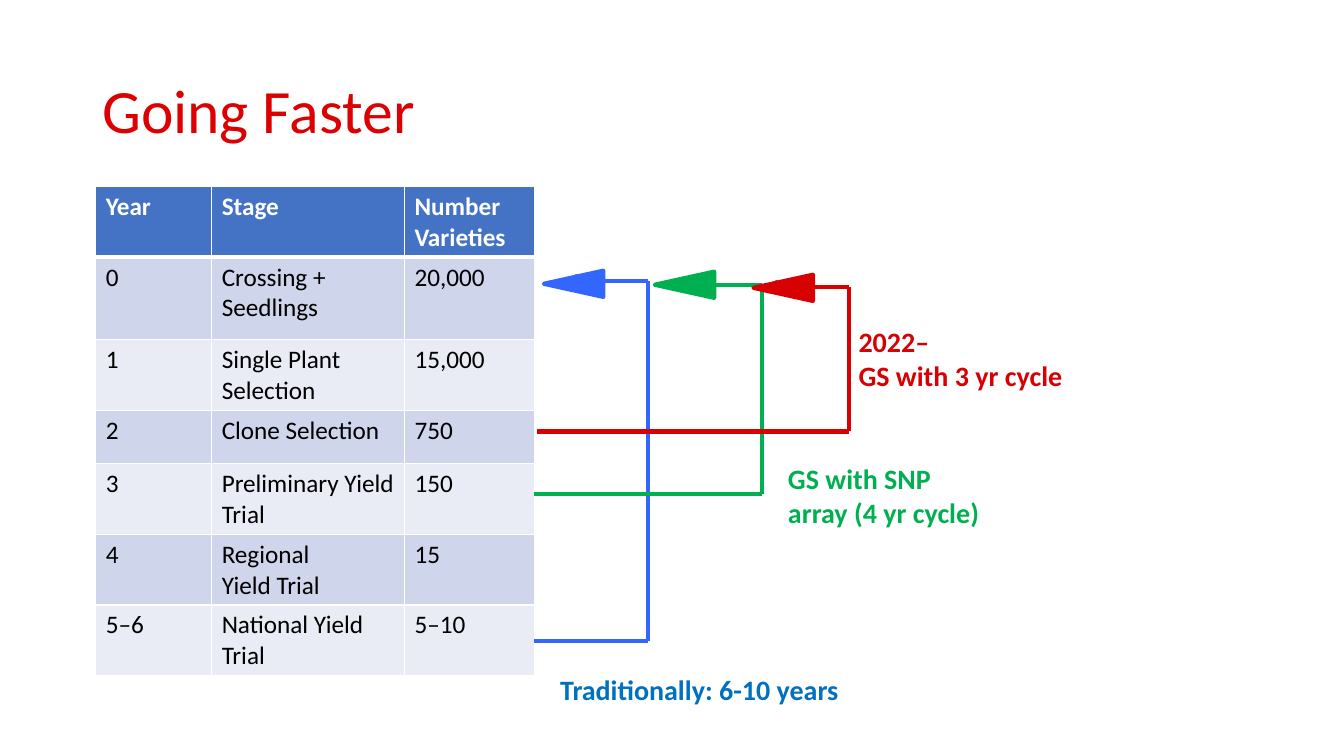
"""Build the "Going Faster" slide: a breeding stage table with three shortening cycle loops."""
from pptx import Presentation
from pptx.dml.color import RGBColor
from pptx.enum.shapes import MSO_CONNECTOR, MSO_SHAPE
from pptx.enum.text import MSO_ANCHOR, MSO_AUTO_SIZE
from pptx.oxml.ns import qn
from pptx.util import Pt
from lxml.etree import SubElement as Sub

TITLE = "Going Faster"
STAGES = [
    ("Year", "Stage", "Number Varieties"),
    ("0", "Crossing + Seedlings", "20,000"),
    ("1", "Single Plant Selection", "15,000"),
    ("2", "Clone Selection", "750"),
    ("3", "Preliminary Yield Trial", "150"),
    ("4", "Regional\nYield Trial", "15"),
    ("5–6", "National Yield Trial", "5–10"),
]
CYCLES = [
    dict(color="3366FF", left=381.6, right=463, top=201, bottom=458, tip=(409.7, 202.7),
         label="Traditionally: 6-10 years", label_color="0070C0", label_box=(393, 476.6, 230.4, 31.7)),
    dict(color="00B050", left=381.6, right=544.3, top=203.8, bottom=352.8, tip=(488.9, 203.4),
         label="GS with SNP array (4 yr cycle)", label_color="00B050", label_box=(555.8, 326.2, 162.7, 55.4)),
    dict(color="D70002", left=383.8, right=606.2, top=205.2, bottom=308.2, tip=(559.4, 205.6),
         label="2022–\nGS with 3 yr cycle", label_color="D70002", label_box=(606.2, 228.2, 162.7, 55.4)),
]
THEME = dict(font="Calibri", title="DD0002", header="4472C4", bands=("E9EBF5", "CFD5EA"),
             white="FFFFFF", black="000000", title_size=44, cell_size=18, label_size=20, stroke=3)
TITLE_BOX = (66, 28.8, 828, 104.4)
TABLE_AT = (68.4, 133.2)
COLUMNS = (82.8, 137.7, 92.7)
ROWS = (50.4, 59, 50.4, 38.2, 50.4, 50.4, 50.4)
HEAD_REACH = 59.8
HEAD_SIZE = (18.7, 42.5)


def points(*lengths):
    return [Pt(length) for length in lengths]


def rgb(color):
    return RGBColor.from_string(color)


def write(frame, text, size, color, bold=False):
    frame.text = text
    for paragraph in frame.paragraphs:
        font = paragraph.font
        font.name, font.size, font.bold = THEME["font"], Pt(size), bold
        font.color.rgb = rgb(color)


def add_label(slide, box, text, size, color, bold=False):
    frame = slide.shapes.add_textbox(*points(*box)).text_frame
    frame.word_wrap = True
    write(frame, text, size, color, bold)
    return frame


def set_borders(cell, bottom_width):
    properties = cell._tc.get_or_add_tcPr()
    for place, (side, width) in enumerate((("L", 1), ("R", 1), ("T", 1), ("B", bottom_width))):
        border = properties.makeelement(qn(f"a:ln{side}"), {"w": str(Pt(width))})
        Sub(Sub(border, qn("a:solidFill")), qn("a:srgbClr"), val=THEME["white"])
        properties.insert(place, border)


def add_stages(slide):
    table = slide.shapes.add_table(len(ROWS), len(COLUMNS),
                                   *points(*TABLE_AT, sum(COLUMNS), sum(ROWS))).table
    for column, width in zip(table.columns, COLUMNS):
        column.width = Pt(width)
    for number, (row, height, stage) in enumerate(zip(table.rows, ROWS, STAGES)):
        row.height = Pt(height)
        header = number == 0
        for cell, text in zip(row.cells, stage):
            write(cell.text_frame, text, THEME["cell_size"],
                  THEME["white"] if header else THEME["black"], header)
            cell.fill.solid()
            cell.fill.fore_color.rgb = rgb(THEME["header"] if header else THEME["bands"][number % 2])
            set_borders(cell, 3 if header else 1)


def add_line(slide, start, end, color, arrow=False):
    line = slide.shapes.add_connector(MSO_CONNECTOR.STRAIGHT, *points(*start, *end))
    line.line.color.rgb = rgb(color)
    line.line.width = Pt(THEME["stroke"])
    if arrow:
        Sub(line.line._get_or_add_ln(), qn("a:tailEnd"), type="arrow")
    Sub(line._element.spPr, qn("a:effectLst"))


def add_cycle(slide, cycle):
    color, left, right = cycle["color"], cycle["left"], cycle["right"]
    top, bottom = cycle["top"], cycle["bottom"]
    add_line(slide, (right, top), (right - HEAD_REACH, top), color, arrow=True)
    add_line(slide, (right, top), (right, bottom), color)
    add_line(slide, (left, bottom), (right, bottom), color)
    (x, y), (width, height) = cycle["tip"], HEAD_SIZE
    head = slide.shapes.add_shape(MSO_SHAPE.ISOSCELES_TRIANGLE,
                                  *points(x - width / 2, y - height / 2, width, height))
    head.rotation = 270
    head.shadow.inherit = False
    head.fill.solid()
    head.fill.fore_color.rgb = head.line.color.rgb = rgb(color)
    head.line.width = Pt(THEME["stroke"])
    frame = add_label(slide, cycle["label_box"], cycle["label"], THEME["label_size"],
                      cycle["label_color"], bold=True)
    frame.auto_size = MSO_AUTO_SIZE.SHAPE_TO_FIT_TEXT


def main():
    deck = Presentation()
    deck.slide_width, deck.slide_height = points(960, 540)
    slide = deck.slides.add_slide(deck.slide_layouts[6])
    title = add_label(slide, TITLE_BOX, TITLE, THEME["title_size"], THEME["title"])
    title.vertical_anchor = MSO_ANCHOR.MIDDLE
    title.paragraphs[0].line_spacing = 0.9
    add_stages(slide)
    for cycle in CYCLES:
        add_cycle(slide, cycle)
    deck.save("out.pptx")


if __name__ == "__main__":
    main()
